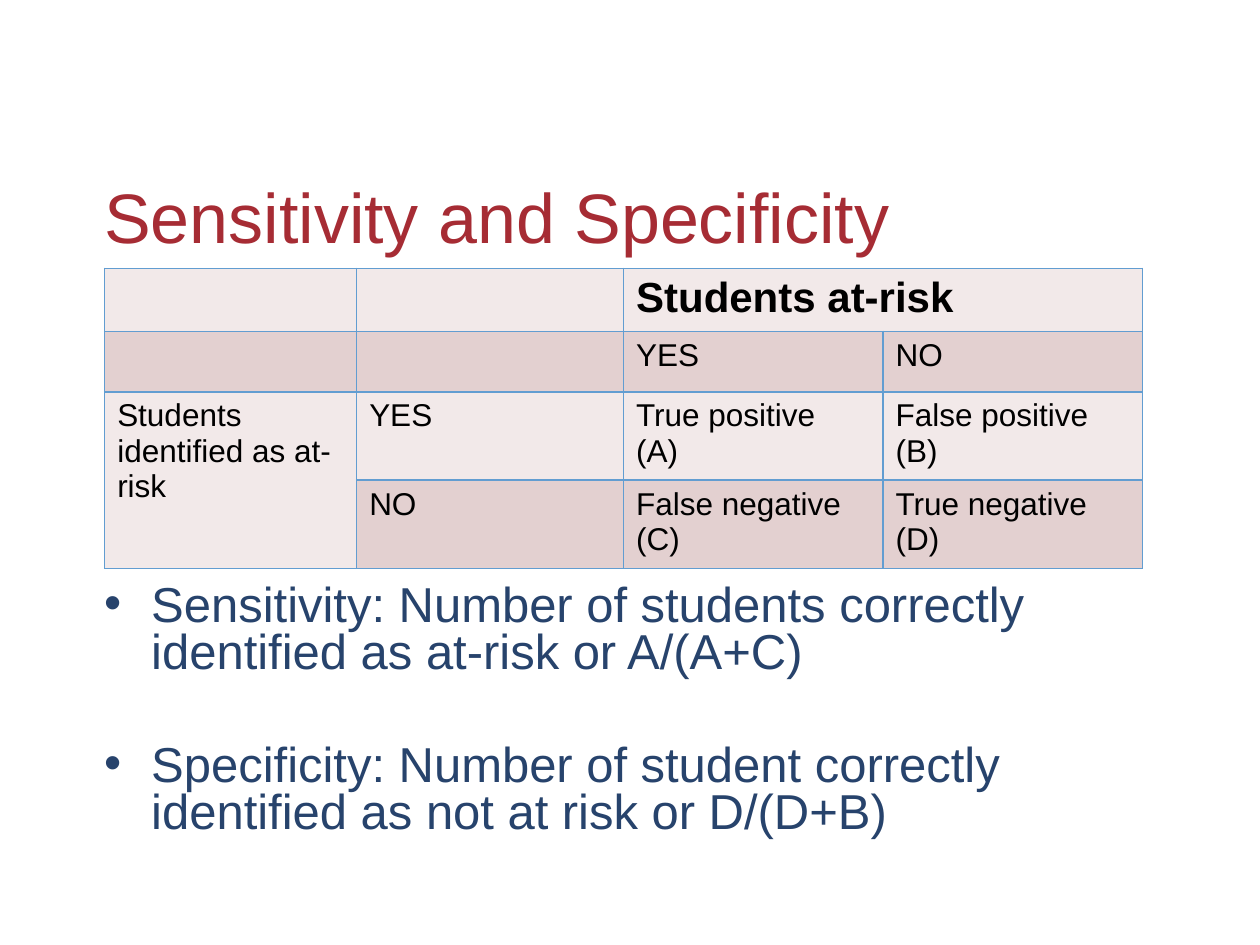
from lxml.etree import SubElement
from pptx import Presentation
from pptx.dml.color import RGBColor
from pptx.enum.text import MSO_VERTICAL_ANCHOR as Anchor
from pptx.oxml.ns import qn
from pptx.util import Cm, Pt

COLORS = {
    "title": "A62C34",
    "body": "27436C",
    "cell": "000000",
    "border": "629DD1",
    "light": "F2E9E9",
    "dark": "E3D0D0",
}


class SlideBuilder:
    font = "Arial"

    def __init__(self, slide):
        self.slide = slide

    def style(self, paragraph, size, color, bold=False):
        for run in paragraph.runs:
            run.font.name = self.font
            run.font.size = Pt(size)
            run.font.bold = bold
            run.font.color.rgb = RGBColor.from_string(COLORS[color])

    def text_frame(self, left, top, width, height, text, anchor):
        box = self.slide.shapes.add_textbox(Cm(left), Cm(top), Cm(width), Cm(height))
        frame = box.text_frame
        frame.word_wrap = True
        frame.vertical_anchor = anchor
        frame.text = text
        return frame

    def title(self, left, top, width, height, text):
        frame = self.text_frame(left, top, width, height, text, Anchor.MIDDLE)
        self.style(frame.paragraphs[0], 40, "title")

    def bullets(self, left, top, width, height, items, indent, gap):
        frame = self.text_frame(left, top, width, height, "\n".join(items), Anchor.TOP)
        for index, paragraph in enumerate(frame.paragraphs):
            properties = paragraph._p.get_or_add_pPr()
            properties.set("marL", str(Cm(indent)))
            properties.set("indent", str(-Cm(indent)))
            SubElement(properties, qn("a:buFont"), typeface=self.font)
            SubElement(properties, qn("a:buChar"), char="•")
            paragraph.line_spacing = 0.8
            if index:
                paragraph.space_before = Pt(gap)
            self.style(paragraph, 28, "body")

    def borders(self, cell):
        properties = cell._tc.get_or_add_tcPr()
        for side in ("lnL", "lnR", "lnT", "lnB"):
            line = SubElement(properties, qn(f"a:{side}"), w=str(Pt(1)))
            fill = SubElement(line, qn("a:solidFill"))
            SubElement(fill, qn("a:srgbClr"), val=COLORS["border"])

    def table(self, left, top, widths, heights, rows, merges):
        table = self.slide.shapes.add_table(
            len(rows), len(widths), Cm(left), Cm(top), Cm(sum(widths)), Cm(sum(heights))
        ).table
        for column, width in zip(table.columns, widths):
            column.width = Cm(width)
        for row, height in zip(table.rows, heights):
            row.height = Cm(height)
        for r, labels in enumerate(rows):
            for c, label in enumerate(labels):
                cell = table.cell(r, c)
                self.borders(cell)
                cell.fill.solid()
                shade = COLORS["dark" if r % 2 else "light"]
                cell.fill.fore_color.rgb = RGBColor.from_string(shade)
                cell.text_frame.text = label
                for paragraph in cell.text_frame.paragraphs:
                    self.style(paragraph, 18 if r else 24, "cell", bold=r == 0)
        for first, last in merges:
            table.cell(*first).merge(table.cell(*last))


def main():
    deck = Presentation()
    deck.slide_width, deck.slide_height = Cm(25.4), Cm(19.05)
    builder = SlideBuilder(deck.slides.add_slide(deck.slide_layouts[6]))

    builder.title(1.85, 3, 21.84, 2.67, "Sensitivity and Specificity")
    builder.table(
        2.11, 5.41,
        widths=[5.08, 5.38, 5.23, 5.23],
        heights=[1.22, 1.22, 1.78, 1.78],
        rows=[
            ["", "", "Students at-risk", ""],
            ["", "", "YES", "NO"],
            ["Students identified as at-risk", "YES", "True positive\n(A)", "False positive (B)"],
            ["", "NO", "False negative (C)", "True negative (D)"],
        ],
        merges=[((0, 2), (0, 3)), ((2, 0), (3, 0))],
    )
    builder.bullets(
        1.85, 11.66, 19.48, 5.51,
        [
            "Sensitivity: Number of students correctly identified as at-risk or A/(A+C)",
            "Specificity: Number of student correctly identified as not at risk or D/(D+B)",
        ],
        indent=0.95,
        gap=38,
    )
    deck.save("out.pptx")


if __name__ == "__main__":
    main()
